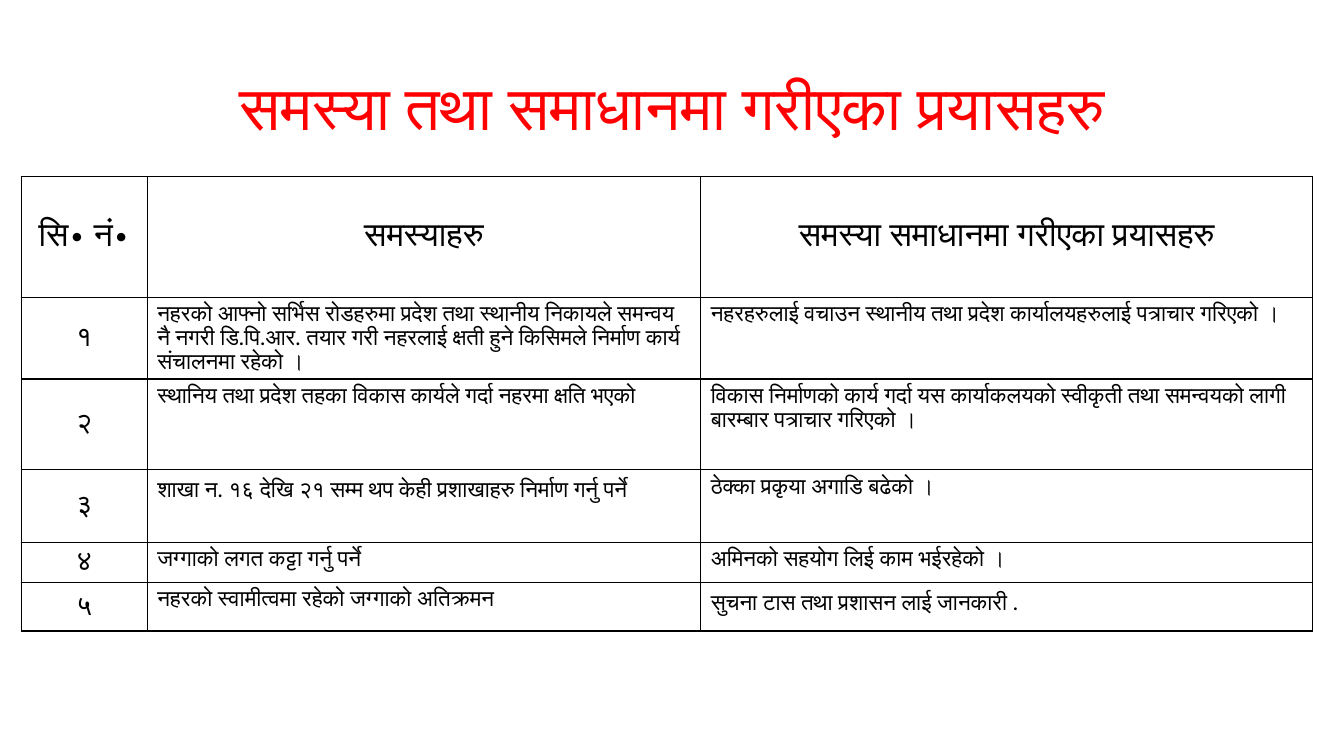
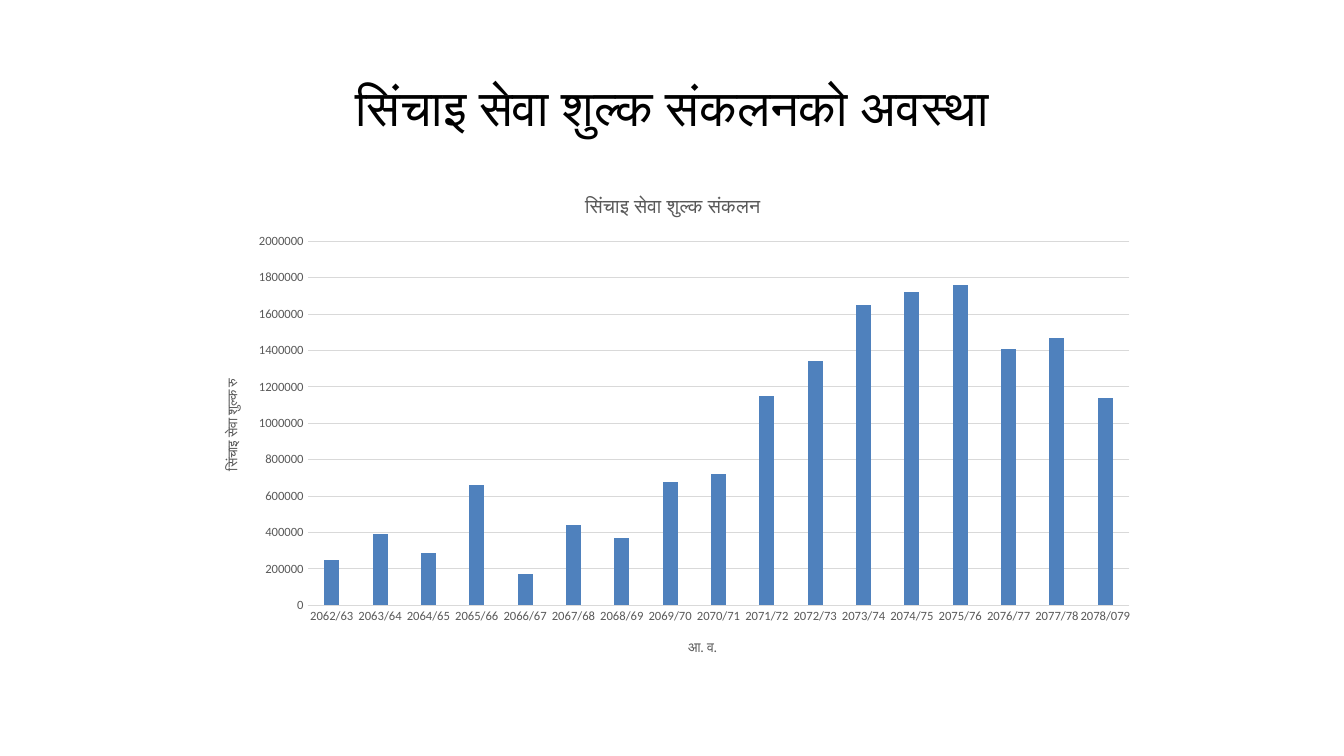
from lxml.etree import SubElement
from pptx import Presentation
from pptx.chart.data import CategoryChartData
from pptx.dml.color import RGBColor
from pptx.enum.chart import XL_CHART_TYPE, XL_TICK_MARK
from pptx.enum.text import MSO_ANCHOR, MSO_AUTO_SIZE, PP_ALIGN
from pptx.oxml import parse_xml
from pptx.oxml.ns import nsdecls, qn
from pptx.util import Inches, Pt

BLACK = RGBColor(0x00, 0x00, 0x00)
RED = RGBColor(0xFF, 0x00, 0x00)
GREY = RGBColor(0x59, 0x59, 0x59)
RULE = RGBColor(0xD9, 0xD9, 0xD9)
BLUE = RGBColor(0x4F, 0x81, 0xBD)
HEAD_FONT, BODY_FONT = "Calibri", "Lato"

prs = Presentation()
prs.slide_width, prs.slide_height = Inches(13.33), Inches(7.5)
W, H = prs.slide_width, prs.slide_height
TOP = Inches(1.75)  # content starts here on both slides


def add_titled_slide(text, size, color, left, top, height):
    """Title-only slide whose title is centred across the slide."""
    s = prs.slides.add_slide(prs.slide_layouts[5])
    title = s.shapes.title
    title.left, title.top = left, top
    title.width, title.height = W - 2 * left, height
    tf = title.text_frame
    tf.text = text
    tf.word_wrap = True
    tf.auto_size = MSO_AUTO_SIZE.NONE
    tf.vertical_anchor = MSO_ANCHOR.MIDDLE
    p = tf.paragraphs[0]
    p.alignment = PP_ALIGN.CENTER
    font = p.runs[0].font
    font.name, font.size, font.color.rgb = HEAD_FONT, Pt(size), color
    return s


def place(parent, index, inner=False, **shares):
    """Fix a chart part at the given shares of the chart's size."""
    for old in parent.findall(qn("c:layout")):
        parent.remove(old)
    layout = parse_xml(f"<c:layout {nsdecls('c')}><c:manualLayout/></c:layout>")
    manual = layout[0]
    if inner:
        SubElement(manual, qn("c:layoutTarget")).set("val", "inner")
    for key in ("x", "y"):
        SubElement(manual, qn(f"c:{key}Mode")).set("val", "edge")
    for key, share in shares.items():
        SubElement(manual, qn(f"c:{key}")).set("val", str(share))
    parent.insert(index, layout)


# Slide 1: problems and the efforts to solve them
s = add_titled_slide("समस्या तथा समाधानमा गरीएका प्रयासहरु", 44, RED,
                     Inches(0.1), Inches(0.6), Inches(0.91))
rows = [
    ("सि∙ नं∙", "समस्याहरु", "समस्या समाधानमा गरीएका प्रयासहरु"),
    ("१", "नहरको आफ्नो सर्भिस रोडहरुमा प्रदेश तथा स्थानीय निकायले समन्वय नै नगरी "
          "डि.पि.आर. तयार गरी नहरलाई क्षती हुने किसिमले निर्माण कार्य संचालनमा रहेको ।",
     "नहरहरुलाई वचाउन स्थानीय तथा प्रदेश कार्यालयहरुलाई पत्राचार गरिएको ।"),
    ("२", "स्थानिय तथा प्रदेश तहका विकास कार्यले गर्दा नहरमा क्षति भएको",
     "विकास निर्माणको कार्य गर्दा यस कार्याकलयको स्वीकृती तथा समन्वयको लागी "
     "बारम्बार पत्राचार गरिएको ।"),
    ("३", "शाखा न. १६ देखि २१ सम्म थप केही प्रशाखाहरु निर्माण गर्नु पर्ने",
     "ठेक्का प्रकृया अगाडि बढेको ।"),
    ("४", "जग्गाको लगत कट्टा गर्नु पर्ने", "अमिनको सहयोग लिई काम भईरहेको ।"),
    ("५", "नहरको स्वामीत्वमा रहेको जग्गाको अतिक्रमन",
     "सुचना टास तथा प्रशासन लाई जानकारी ."),
]
col_widths = [1.25, 5.49, 6.07]
row_heights = [1.2, 0.81, 0.9, 0.72, 0.4, 0.48]
lowered = {(3, 1), (5, 2)}  # cells whose text sits slightly lower

tbl = s.shapes.add_table(len(rows), len(col_widths), Inches(0.21), TOP,
                         Inches(sum(col_widths)), Inches(sum(row_heights))).table
for col, width in zip(tbl.columns, col_widths):
    col.width = Inches(width)
for row, height in zip(tbl.rows, row_heights):
    row.height = Inches(height)

for i, texts in enumerate(rows):
    for j, text in enumerate(texts):
        cell = tbl.cell(i, j)
        cell.text_frame.text = text
        p = cell.text_frame.paragraphs[0]
        font = p.runs[0].font
        font.bold, font.color.rgb = False, BLACK
        if i == 0 or j == 0:
            font.name, font.size = HEAD_FONT, Pt(24 if i == 0 else 20)
            p.alignment = PP_ALIGN.CENTER
            cell.vertical_anchor = MSO_ANCHOR.MIDDLE
            cell.margin_top = cell.margin_bottom = 0
        else:
            font.name, font.size = BODY_FONT, Pt(16)
            p.line_spacing = Pt(17)
            cell.vertical_anchor = MSO_ANCHOR.TOP
            cell.margin_top = Inches(0.09 if (i, j) in lowered else 0.05)
        # Borders come before the fill in the cell properties
        for side in ("lnL", "lnR", "lnT", "lnB"):
            cell._tc.get_or_add_tcPr().append(parse_xml(
                f'<a:{side} {nsdecls("a")} w="{Pt(1)}"><a:solidFill>'
                f'<a:srgbClr val="{BLACK}"/></a:solidFill></a:{side}>'))
        cell.fill.background()

# Slide 2: service fee collected per fiscal year
s = add_titled_slide("सिंचाइ सेवा शुल्क संकलनको अवस्था", 36, BLACK,
                     Inches(0.7), Inches(0.55), Inches(1.02))
data = CategoryChartData()
data.categories = [f"{y}/{(y + 1) % 100}" for y in range(2062, 2078)] + ["2078/079"]
thousands = [250, 390, 290, 660, 170, 440, 370, 680, 720,
             1150, 1340, 1650, 1720, 1760, 1410, 1470, 1140]
data.add_series("Series 1", [v * 1000 for v in thousands])
chart = s.shapes.add_chart(XL_CHART_TYPE.COLUMN_CLUSTERED, Inches(2.02), TOP,
                           Inches(9.37), Inches(4.95), data).chart
chart.has_legend = False
chart.font.name, chart.font.size = HEAD_FONT, Pt(10)
plot = chart.plots[0]
plot.vary_by_categories = False
plot.gap_width, plot.overlap = 219, -27
fill = plot.series[0].format.fill
fill.solid()
fill.fore_color.rgb = BLUE

# Axes
cat, val = chart.category_axis, chart.value_axis
for axis in (cat, val):
    axis.major_tick_mark = axis.minor_tick_mark = XL_TICK_MARK.NONE
    font = axis.tick_labels.font
    font.name, font.size, font.color.rgb = HEAD_FONT, Pt(9), GREY
val.minimum_scale, val.maximum_scale, val.major_unit = 0, 2000000, 200000
val.format.line.fill.background()
for line in (cat.format.line, val.major_gridlines.format.line):
    line.color.rgb, line.width = RULE, Pt(0.75)

# Chart and axis titles
for title, text, size, x, y in [
    (chart.chart_title, "सिंचाइ सेवा शुल्क संकलन", 14, 0.4, 0.03),
    (cat.axis_title, "आ. व.", 10, 0.51, 0.92),
    (val.axis_title, "सिंचाइ सेवा शुल्क रु", 10, 0.02, 0.4),
]:
    title.text_frame.text = text
    font = title.text_frame.paragraphs[0].runs[0].font
    font.name, font.size, font.bold, font.color.rgb = HEAD_FONT, Pt(size), False, GREY
    place(title._element if hasattr(title, "_element") else title.element, 1, x=x, y=y)
place(chart.element.find(".//" + qn("c:plotArea")), 0, True,
      x=0.11, y=0.13, w=0.87, h=0.73)

prs.save("out.pptx")
